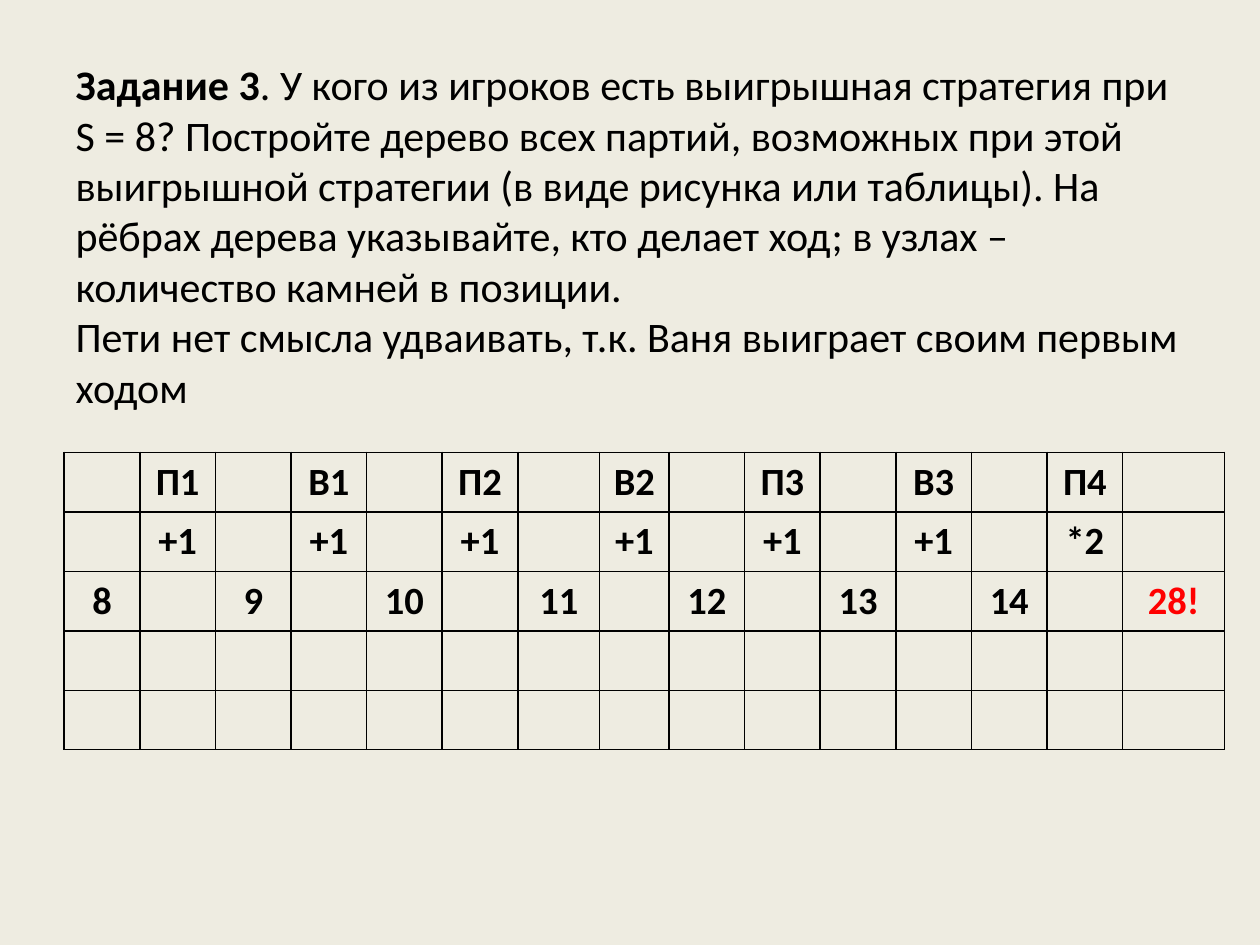
from lxml import etree
from pptx import Presentation
from pptx.dml.color import RGBColor
from pptx.enum import text
from pptx.oxml import ns
from pptx.util import Inches, Pt

BACKGROUND = RGBColor(0xEE, 0xEC, 0xE1)
BLACK = RGBColor(0, 0, 0)
RED = RGBColor(0xFF, 0, 0)
FONT = "Calibri"

TASK = (
    ". У кого из игроков есть выигрышная стратегия при S = 8? "
    "Постройте дерево всех партий, возможных при этой выигрышной стратегии "
    "(в виде рисунка или таблицы). На рёбрах дерева указывайте, кто делает ход; "
    "в узлах – количество камней в позиции."
)
REMARK = "Пети нет смысла удваивать, т.к. Ваня выиграет своим первым ходом"

PLAYERS = ["П1", "В1", "П2", "В2", "П3", "В3", "П4"]
MOVES = ["+1"] * 6 + ["*2"]
STONES = ["8", "9", "10", "11", "12", "13", "14", "28!"]
COLUMN_WIDTHS = [0.6] * 6 + [0.65, 0.55] + [0.6] * 6 + [0.81]
ROW_COUNT, ROW_HEIGHT = 5, 0.47


def style_font(font, size, color=BLACK):
    font.name = FONT
    font.size = Pt(size)
    font.color.rgb = color


def add_task(slide):
    title = slide.shapes.title
    title.left, title.top = Inches(0.5), Inches(0.3)
    title.width, title.height = Inches(9), Inches(3.13)
    frame = title.text_frame
    frame.word_wrap = True
    frame.auto_size = text.MSO_AUTO_SIZE.NONE
    frame.vertical_anchor = text.MSO_ANCHOR.MIDDLE

    paragraph = frame.paragraphs[0]
    paragraph.alignment = text.PP_ALIGN.LEFT
    style_font(paragraph.font, 24)
    heading = paragraph.add_run()
    heading.text = "Задание 3"
    heading.font.bold = True
    paragraph.add_run().text = TASK
    paragraph.add_line_break()
    paragraph.add_run().text = REMARK
    for run in paragraph.runs:
        style_font(run.font, 24)


def add_borders(cell):
    properties = cell._tc.get_or_add_tcPr()
    for position, side in enumerate(("a:lnL", "a:lnR", "a:lnT", "a:lnB")):
        line = etree.Element(ns.qn(side), w=str(Pt(1)))
        fill = etree.SubElement(line, ns.qn("a:solidFill"))
        etree.SubElement(fill, ns.qn("a:srgbClr"), val=str(BLACK))
        properties.insert(position, line)


def format_cell(cell, content, color):
    cell.text = content
    cell.fill.background()
    add_borders(cell)
    paragraph = cell.text_frame.paragraphs[0]
    paragraph.alignment = text.PP_ALIGN.CENTER
    style_font(paragraph.font, 22, color)
    paragraph.font.bold = True
    if not content:
        # An empty cell takes its line height from the end mark
        etree.SubElement(paragraph._p, ns.qn("a:endParaRPr"), sz="2200")


def add_game_table(slide):
    # Moves stand in odd columns, the stone counts between them in even ones
    contents = {}
    for row, values in enumerate((PLAYERS, MOVES)):
        for step, value in enumerate(values):
            contents[row, 2 * step + 1] = value
    for step, value in enumerate(STONES):
        contents[2, 2 * step] = value

    table = slide.shapes.add_table(
        ROW_COUNT, len(COLUMN_WIDTHS), Inches(0.51), Inches(3.59),
        Inches(sum(COLUMN_WIDTHS)), Inches(ROW_COUNT * ROW_HEIGHT),
    ).table
    table.first_row = table.horz_banding = False
    for column, width in zip(table.columns, COLUMN_WIDTHS):
        column.width = Inches(width)
    for row_index, row in enumerate(table.rows):
        row.height = Inches(ROW_HEIGHT)
        for column_index, cell in enumerate(row.cells):
            content = contents.get((row_index, column_index), "")
            format_cell(cell, content, RED if content == STONES[-1] else BLACK)


def main():
    presentation = Presentation()
    presentation.slide_width, presentation.slide_height = Inches(10), Inches(7.5)
    slide = presentation.slides.add_slide(presentation.slide_layouts[5])
    slide.background.fill.solid()
    slide.background.fill.fore_color.rgb = BACKGROUND
    add_task(slide)
    add_game_table(slide)
    presentation.save("out.pptx")


if __name__ == "__main__":
    main()
